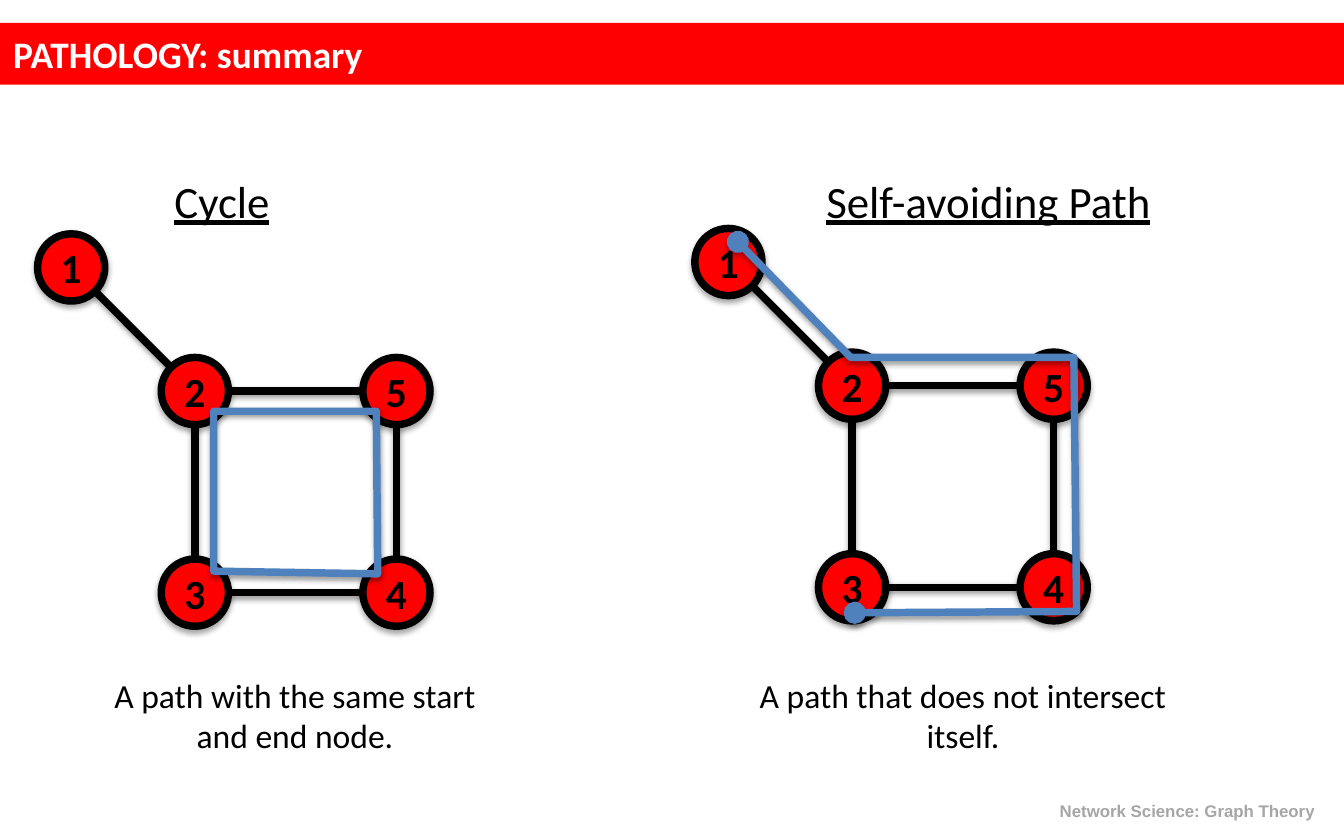
from dataclasses import dataclass
from math import hypot

from lxml.etree import SubElement
from pptx import Presentation
from pptx.dml.color import RGBColor
from pptx.enum.shapes import MSO_CONNECTOR as Connector, MSO_SHAPE as Shape
from pptx.enum.text import MSO_ANCHOR as Anchor, PP_ALIGN as Align
from pptx.oxml.ns import qn
from pptx.util import Pt

PX = 9144


@dataclass(frozen=True)
class Theme:
    red: str = "FF0000"
    blue: str = "4F81BD"
    black: str = "000000"
    white: str = "FFFFFF"
    grey: str = "A6A6A6"
    font: str = "Calibri"
    footer_font: str = "Arial"
    footer_size: float = 9
    caption_size: float = 18
    title_size: float = 20
    node_size: float = 22.2
    heading_size: float = 24
    line_width: float = 4


@dataclass(frozen=True)
class Panel:
    heading: str
    heading_box: tuple
    caption: str
    caption_box: tuple
    graph_origin: tuple
    route: tuple
    closed: bool


THEME = Theme()
NODE_DIAMETER = 50
NODES = {"1": (0, 0), "2": (92, 92), "5": (242, 92), "4": (242, 242), "3": (92, 242)}
EDGES = ("12", "25", "54", "43", "32")

PANELS = (
    Panel("Cycle", (92, 0, 266, 50),
          "A path with the same start and end node.", (26, 373, 331, 71),
          (0, 50), ((131, 132), (252, 132), (253, 253), (131, 251)), True),
    Panel("Self-avoiding Path", (88, 0, 307, 50),
          "A path that does not intersect itself.", (32, 373, 335, 71),
          (0, 46), ((32, 10), (116, 96), (282, 96), (284, 285), (119, 286)), False),
)


def emu(*lengths):
    return [round(length * PX) for length in lengths]


def color(value):
    return RGBColor.from_string(value)


def set_line(shape, value):
    shape.line.color.rgb = color(value)
    shape.line.width = Pt(THEME.line_width)


def add_shadow(shape, distance, opacity):
    effects = SubElement(shape.element.spPr, qn("a:effectLst"))
    shadow = SubElement(effects, qn("a:outerShdw"), blurRad=str(Pt(3.1)),
                        dist=str(Pt(distance)), dir="5400000", rotWithShape="0")
    black = SubElement(shadow, qn("a:srgbClr"), val=THEME.black)
    SubElement(black, qn("a:alpha"), val=str(opacity * 1000))


def write(shape, text, size, value, font=THEME.font, align=Align.LEFT, bold=False, underline=False):
    shape.text_frame.word_wrap = True
    paragraph = shape.text_frame.paragraphs[0]
    paragraph.text = text
    paragraph.alignment = align
    paragraph.font.name = font
    paragraph.font.size = Pt(size)
    paragraph.font.bold = bold
    paragraph.font.underline = underline
    paragraph.font.color.rgb = color(value)


def add_title(slide, box):
    banner = slide.shapes.add_shape(Shape.RECTANGLE, *emu(*box))
    banner.shadow.inherit = False
    banner.fill.solid()
    banner.fill.fore_color.rgb = color(THEME.red)
    banner.line.fill.background()
    banner.text_frame.vertical_anchor = Anchor.MIDDLE
    write(banner, "PATHOLOGY: summary", THEME.title_size, THEME.white, bold=True)


def add_footer(slide, box):
    footer = slide.shapes.add_textbox(*emu(*box))
    write(footer, "Network Science: Graph Theory", THEME.footer_size, THEME.grey,
          font=THEME.footer_font, align=Align.RIGHT, bold=True)


def add_edge(slide, start, end):
    radius = NODE_DIAMETER / 2
    across, down = end[0] - start[0], end[1] - start[1]
    trim = radius / hypot(across, down)
    trim_x, trim_y = across * trim, down * trim
    edge = slide.shapes.add_connector(Connector.STRAIGHT, *emu(
        start[0] + radius + trim_x, start[1] + radius + trim_y,
        end[0] + radius - trim_x, end[1] + radius - trim_y))
    set_line(edge, THEME.black)
    add_shadow(edge, 1.6, 38)


def add_node(slide, label, corner):
    node = slide.shapes.add_shape(Shape.OVAL, *emu(*corner, NODE_DIAMETER, NODE_DIAMETER))
    node.fill.solid()
    node.fill.fore_color.rgb = color(THEME.red)
    set_line(node, THEME.black)
    add_shadow(node, 1.8, 35)
    frame = node.text_frame
    frame.margin_left = frame.margin_right = frame.margin_top = frame.margin_bottom = 0
    frame.vertical_anchor = Anchor.MIDDLE
    write(node, label, THEME.node_size, THEME.black, align=Align.CENTER, bold=True)


def add_route(slide, points, closed):
    builder = slide.shapes.build_freeform(*points[0], scale=PX)
    builder.add_line_segments(points[1:], close=closed)
    route = builder.convert_to_shape()
    route.fill.background()
    set_line(route, THEME.blue)
    if not closed:
        for end in ("a:headEnd", "a:tailEnd"):
            SubElement(route.element.spPr.find(qn("a:ln")), qn(end), type="oval")
    add_shadow(route, 1.6, 38)


def add_graph(slide, origin, route, closed):
    def place(point):
        return origin[0] + point[0], origin[1] + point[1]

    for start, end in EDGES:
        add_edge(slide, place(NODES[start]), place(NODES[end]))
    for label, corner in NODES.items():
        add_node(slide, label, place(corner))
    add_route(slide, [place(point) for point in route], closed)


def add_panel(slide, panel, left, top):
    def text_box(box):
        return slide.shapes.add_textbox(*emu(left + box[0], top + box[1], *box[2:]))

    origin = left + panel.graph_origin[0], top + panel.graph_origin[1]
    add_graph(slide, origin, panel.route, panel.closed)
    write(text_box(panel.heading_box), panel.heading, THEME.heading_size, THEME.black, underline=True)
    write(text_box(panel.caption_box), panel.caption, THEME.caption_size, THEME.black,
          align=Align.CENTER)


def main():
    presentation = Presentation()
    presentation.slide_width, presentation.slide_height = emu(1000, 625)
    slide = presentation.slides.add_slide(presentation.slide_layouts[6])
    add_footer(slide, (705, 591, 283, 25))
    add_title(slide, (0, 17, 1000, 46))
    for panel, left in zip(PANELS, (28, 517)):
        add_panel(slide, panel, left, 124)
    presentation.save("out.pptx")


if __name__ == "__main__":
    main()
